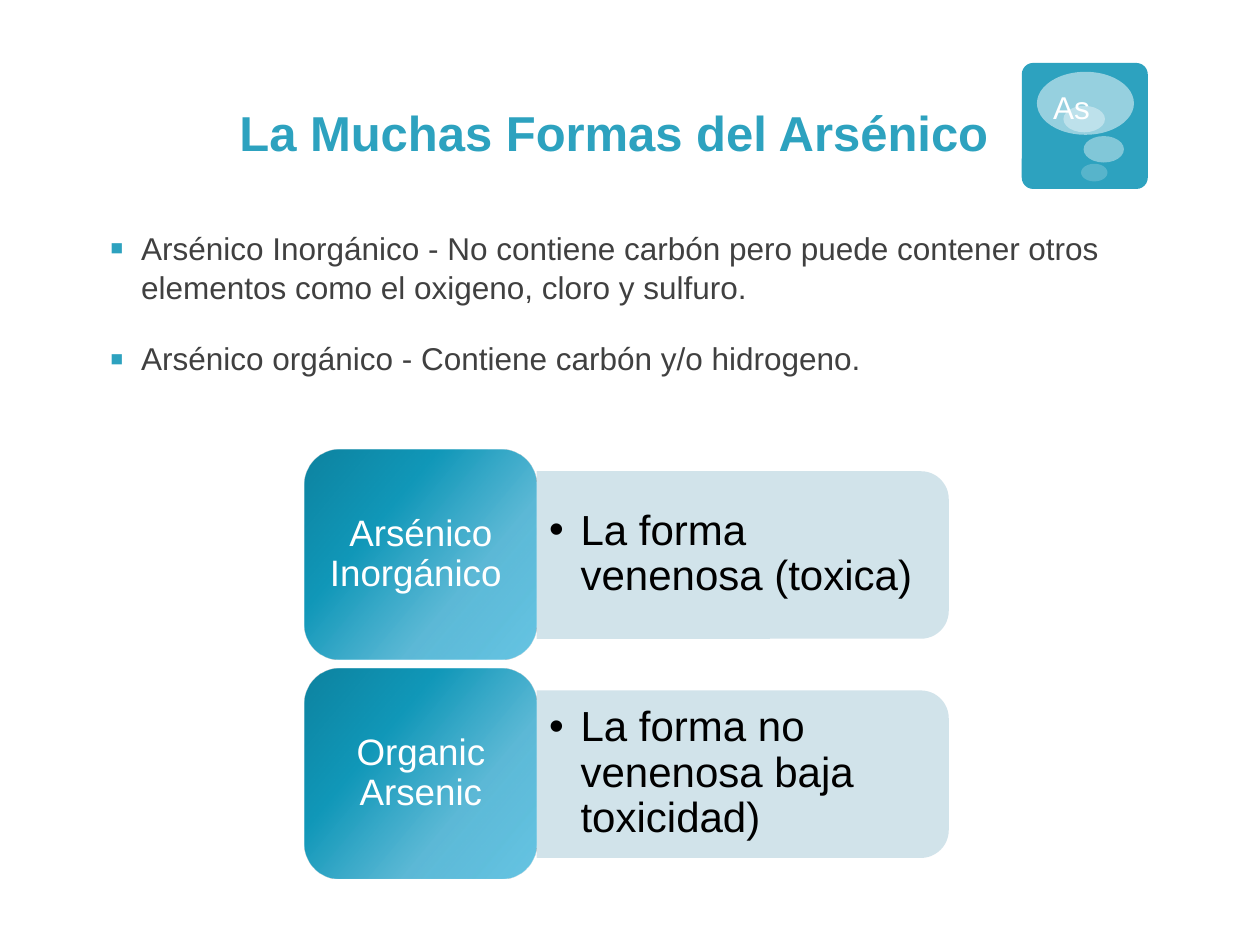
import pptx
import pptx.dml.color
import pptx.enum.shapes
import pptx.enum.text
import pptx.oxml
import pptx.oxml.ns
import pptx.util
from pptx.util import Inches

RGBColor = pptx.dml.color.RGBColor
SHAPE = pptx.enum.shapes.MSO_SHAPE
ANCHOR = pptx.enum.text.MSO_ANCHOR
ALIGN = pptx.enum.text.PP_ALIGN

TEAL = RGBColor(0x2D, 0xA2, 0xBF)
PALE_BLUE = RGBColor(0xCD, 0xE0, 0xE8)
GRAY = RGBColor(0x40, 0x40, 0x40)
WHITE = RGBColor(0xFF, 0xFF, 0xFF)
BLACK = RGBColor(0, 0, 0)

NS = pptx.oxml.ns.nsdecls("a")
# position, colour, opacity, in percent
GRADIENT_STOPS = [(0, "4CBBDF", 85), (33, "55B6D5", 95),
                  (67, "1198B9", 100), (100, "0E83A0", 100)]
GRADIENT_XML = f'<a:gradFill {NS} rotWithShape="1"><a:gsLst>' + "".join(
    f'<a:gs pos="{position * 1000}"><a:srgbClr val="{color}">'
    f'<a:alpha val="{opacity * 1000}"/></a:srgbClr></a:gs>'
    for position, color, opacity in GRADIENT_STOPS
) + f'</a:gsLst><a:lin ang="{220 * 60000}" scaled="0"/></a:gradFill>'


def add_filled_shape(kind, box, color, opacity=100):
    shape = slide.shapes.add_shape(kind, *map(Inches, box))
    shape.shadow.inherit = False
    shape.fill.solid()
    shape.fill.fore_color.rgb = color
    shape.line.fill.background()
    if opacity < 100:
        for clr in shape._element.spPr.iter(pptx.oxml.ns.qn("a:srgbClr")):
            clr.append(pptx.oxml.parse_xml(f'<a:alpha {NS} val="{opacity * 1000}"/>'))
    return shape


def write_text(shape, texts, size, color, insets=(0.1, 0.05, 0.1, 0.05),
               anchor=ANCHOR.TOP, align=ALIGN.LEFT, bullet="", bold=False,
               line_spacing=None):
    """Fill a shape with one paragraph per text; bullet is the bullet's XML."""
    frame = shape.text_frame
    frame.word_wrap = True
    frame.auto_size = pptx.enum.text.MSO_AUTO_SIZE.NONE
    frame.vertical_anchor = anchor
    (frame.margin_left, frame.margin_top,
     frame.margin_right, frame.margin_bottom) = map(Inches, insets)
    for number, text in enumerate(texts):
        paragraph = frame.add_paragraph() if number else frame.paragraphs[0]
        if bullet:
            properties = paragraph._p.get_or_add_pPr()
            properties.set("marL", str(Inches(0.25)))
            properties.set("indent", str(-Inches(0.25)))
            for element in pptx.oxml.parse_xml(f"<a:pPr {NS}>{bullet}</a:pPr>"):
                properties.append(element)
        if number:
            paragraph.space_before = pptx.util.Pt(18)
        paragraph.alignment = align
        paragraph.line_spacing = line_spacing
        run = paragraph.add_run()
        run.text = text
        run.font.name = "Arial"
        run.font.size = pptx.util.Pt(size)
        run.font.bold = bold
        run.font.color.rgb = color


presentation = pptx.Presentation()
presentation.slide_width = Inches(10)
presentation.slide_height = Inches(7.5)
slide = presentation.slides.add_slide(presentation.slide_layouts[5])

# Badge with thought bubbles
badge = add_filled_shape(SHAPE.ROUNDED_RECTANGLE, (8.11, 0.5, 1, 1), TEAL)
badge.adjustments[0] = 0.09
for bubble_box, opacity in [((8.23, 0.57, 0.77, 0.5), 50),
                            ((8.6, 1.08, 0.32, 0.21), 40),
                            ((8.58, 1.3, 0.21, 0.14), 20),
                            ((8.44, 0.84, 0.33, 0.21), 38)]:
    add_filled_shape(SHAPE.OVAL, bubble_box, WHITE, opacity)

title = slide.shapes.title
title.left, title.top = Inches(0.99), Inches(0.57)
title.width, title.height = Inches(7.06), Inches(0.76)
write_text(title, ["La Muchas Formas del Arsénico "], 28, TEAL,
           insets=(0.05, 0.05, 0.1, 0.05), anchor=ANCHOR.BOTTOM,
           align=ALIGN.RIGHT, bold=True)

definitions = slide.shapes.add_textbox(*map(Inches, (0.82, 1.75, 8.29, 1.5)))
write_text(definitions, [
    "Arsénico Inorgánico - No contiene carbón pero puede contener otros "
    "elementos como el oxigeno, cloro y sulfuro.",
    "Arsénico orgánico - Contiene carbón y/o hidrogeno.",
], 18, GRAY, insets=(0.05, 0.05, 0.1, 0.05), line_spacing=1.05,
    bullet=f'<a:buClr><a:srgbClr val="{TEAL}"/></a:buClr>'
           '<a:buSzPct val="130000"/><a:buFont typeface="Arial"/><a:buChar char="▪"/>')

symbol = slide.shapes.add_textbox(*map(Inches, (8.26, 0.65, 0.51, 0.4)))
write_text(symbol, ["As"], 18, WHITE)

# One row per form of arsenic: a bar with its effect, then a tile with its name
ROW_TOP, ROW_PITCH = 3.57, 1.74
forms = [("Arsénico Inorgánico ", "La forma venenosa (toxica)"),
         ("Organic Arsenic", "La forma no venenosa baja toxicidad)")]
for row, (form, effect) in enumerate(forms):
    top = ROW_TOP + row * ROW_PITCH

    bar = add_filled_shape(SHAPE.ROUND_2_SAME_RECTANGLE,
                           (5.23, top - 0.8, 1.33, 3.27), PALE_BLUE, 90)
    bar.rotation = 90
    effect_box = slide.shapes.add_textbox(*map(Inches, (4.26, top + 0.23, 3.2, 1.2)))
    write_text(effect_box, [effect], 24, BLACK, anchor=ANCHOR.MIDDLE, line_spacing=0.9,
               bullet='<a:buFont typeface="Arial"/><a:buChar char="•"/>')

    tile = add_filled_shape(SHAPE.ROUNDED_RECTANGLE, (2.42, top, 1.84, 1.66), TEAL)
    solid_fill = tile._element.spPr.find(pptx.oxml.ns.qn("a:solidFill"))
    tile._element.spPr.replace(solid_fill, pptx.oxml.parse_xml(GRADIENT_XML))
    form_box = slide.shapes.add_textbox(*map(Inches, (2.5, top + 0.08, 1.68, 1.5)))
    write_text(form_box, [form], 21, WHITE, insets=(0.09, 0.04, 0.09, 0.04),
               anchor=ANCHOR.MIDDLE, align=ALIGN.CENTER, line_spacing=0.9)

presentation.save("out.pptx")
